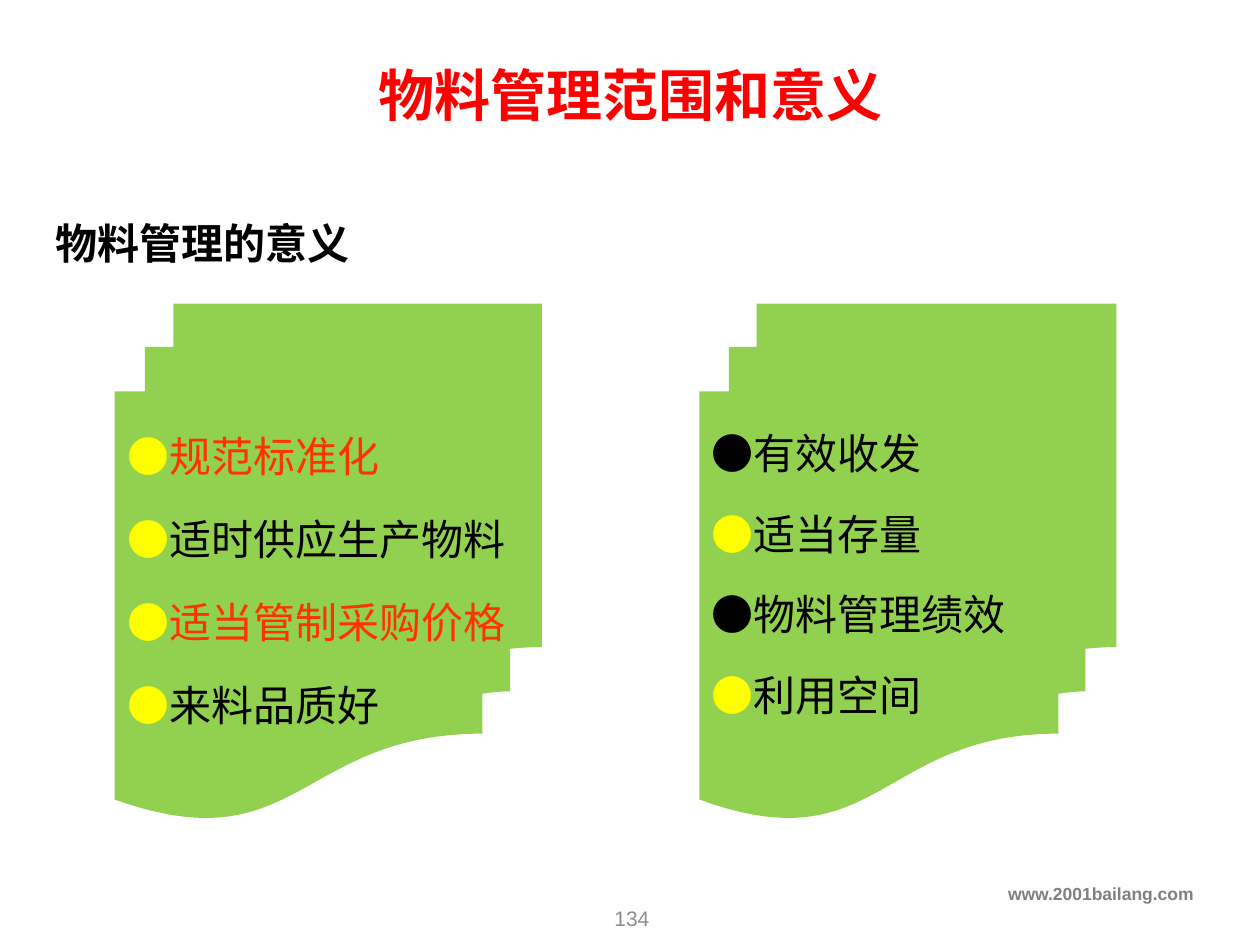
"""Build the slide on the scope and meaning of materials management."""
from lxml import etree
from pptx import Presentation
from pptx import util as u
from pptx.dml.color import RGBColor
from pptx.enum import shapes, text
from pptx.oxml.ns import qn

CJK, LATIN = "Noto Sans CJK SC", "Arial"
BLACK, YELLOW, RED = "000000", "FFFF00", "FF3300"
GREEN = "92D050"
LEFT, CENTER, RIGHT = (text.PP_ALIGN.LEFT, text.PP_ALIGN.CENTER, text.PP_ALIGN.RIGHT)
TOP, MIDDLE = text.MSO_ANCHOR.TOP, text.MSO_ANCHOR.MIDDLE

LABELS = [
    ("www.2001bailang.com", (0, 6.96, 9.57, 0.35), RIGHT, TOP,
     {"size": 10, "name": LATIN, "color": "808080", "bold": True}),
    ("物料管理范围和意义", (2.8, 0.47, 4.41, 0.55), CENTER, MIDDLE,
     {"size": 32, "name": LATIN, "color": "FF0000", "bold": True}),
    ("134", (3.89, 7.09, 2.25, 0.4), CENTER, MIDDLE,
     {"size": 12, "name": LATIN, "color": "8C8C8C"}),
    ("物料管理的意义", (0.34, 1.61, 3.95, 0.63), LEFT, MIDDLE,
     {"size": 24, "name": CJK, "color": BLACK, "bold": True}),
]
CARD_TOP, CARD_HEIGHT = 2.41, 4.09
CARDS = [
    {"left": 0.91, "width": 3.39, "spacing": 1.65, "items": [
        (YELLOW, "规范标准化", RED),
        (YELLOW, "适时供应生产物料", BLACK),
        (YELLOW, "适当管制采购价格", RED),
        (YELLOW, "来料品质好", BLACK)]},
    {"left": 5.55, "width": 3.31, "spacing": 1.6, "items": [
        (BLACK, "有效收发", BLACK),
        (YELLOW, "适当存量", BLACK),
        (BLACK, "物料管理绩效", BLACK),
        (YELLOW, "利用空间", BLACK)]},
]


def rgb(value):
    return RGBColor.from_string(value)


def inches(values):
    return [u.Inches(value) for value in values]


def add_span(para, words, style):
    span = para.add_run()
    span.text = words
    for key, value in style.items():
        if key == "color":
            span.font.color.rgb = rgb(value)
        else:
            setattr(span.font, key, u.Pt(value) if key == "size" else value)
    etree.SubElement(span.font._element, qn("a:ea")).set("typeface", CJK)


def add_label(page, words, place, align, anchor, style):
    frame = page.shapes.add_textbox(*inches(place)).text_frame
    frame.word_wrap = True
    frame.vertical_anchor = anchor
    para = frame.paragraphs[0]
    para.alignment = align
    add_span(para, words, style)


def add_card(page, left, width, spacing, items):
    card = page.shapes.add_shape(
        shapes.MSO_SHAPE.FLOWCHART_MULTIDOCUMENT,
        *inches((left, CARD_TOP, width, CARD_HEIGHT)))
    card.shadow.inherit = False
    card.fill.solid()
    card.fill.fore_color.rgb = rgb(GREEN)
    card.line.fill.background()
    frame = card.text_frame
    frame.word_wrap = False
    frame.vertical_anchor = TOP
    for index, (dot_color, words, color) in enumerate(items):
        para = frame.add_paragraph() if index else frame.paragraphs[0]
        para.alignment = LEFT
        para.line_spacing = spacing
        for part, part_color in (("●", dot_color), (words, color)):
            add_span(para, part, {"size": 24, "name": CJK, "color": part_color})


def main():
    deck = Presentation()
    deck.slide_width, deck.slide_height = inches((10, 7.5))
    page = deck.slides.add_slide(deck.slide_layouts[6])
    for label in LABELS:
        add_label(page, *label)
    for card in CARDS:
        add_card(page, **card)
    deck.save("out.pptx")


if __name__ == "__main__":
    main()
